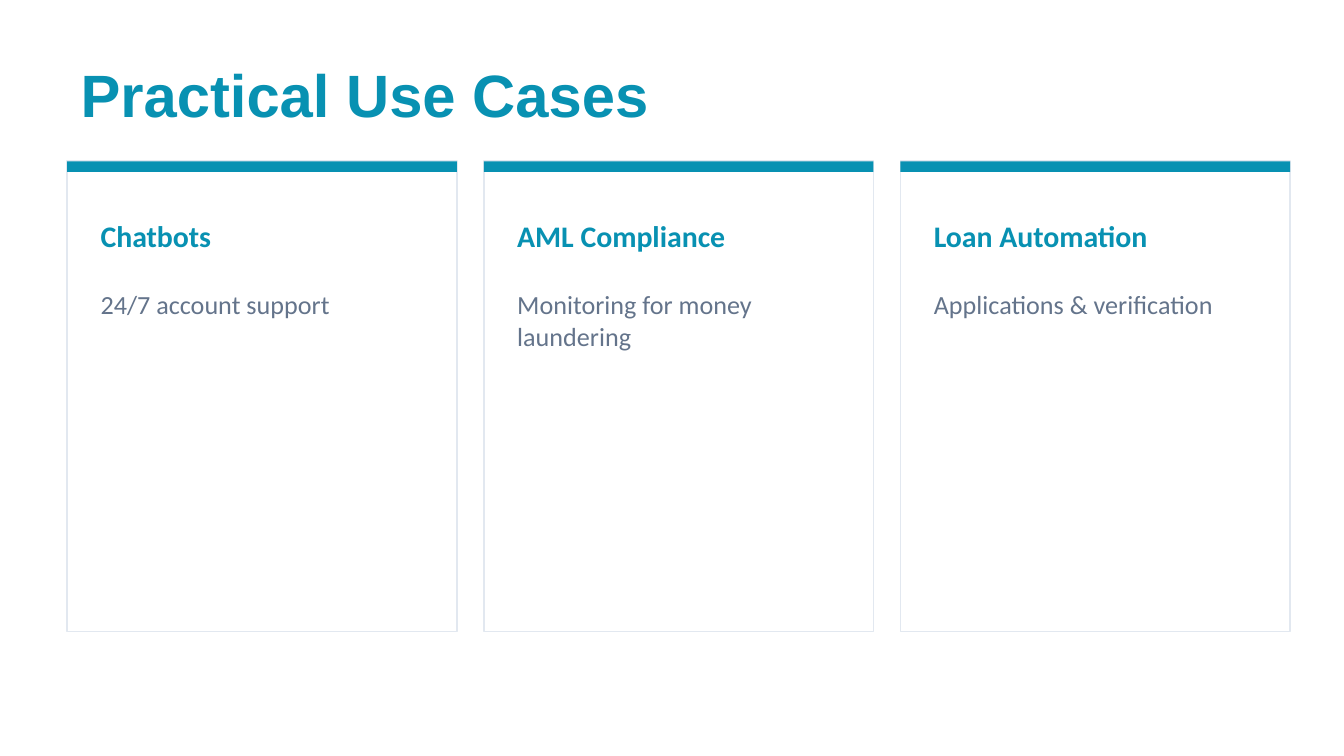
"""Build the Practical Use Cases slide with three cards."""
from pptx import Presentation
from pptx.dml.color import RGBColor
from pptx.enum.shapes import MSO_SHAPE
from pptx.enum.text import MSO_ANCHOR, PP_ALIGN
from pptx.util import Inches, Pt

RECTANGLE = MSO_SHAPE.RECTANGLE
TOP, MIDDLE = MSO_ANCHOR.TOP, MSO_ANCHOR.MIDDLE
LEFT = PP_ALIGN.LEFT

TEAL = RGBColor(0x08, 0x91, 0xB2)
SLATE = RGBColor(0x64, 0x74, 0x8B)
BORDER = RGBColor(0xE2, 0xE8, 0xF0)
WHITE = RGBColor(0xFF, 0xFF, 0xFF)

TITLE = "Practical Use Cases"
CARDS = [
    ("Chatbots", "24/7 account support"),
    ("AML Compliance", "Monitoring for money laundering"),
    ("Loan Automation", "Applications & verification"),
]

SLIDE_WIDTH = Inches(10)
SLIDE_HEIGHT = SLIDE_WIDTH * 9 // 16
MARGIN, CARD_TOP = 0.5, 1.2
CARD_WIDTH, CARD_HEIGHT, GAP = 2.9, 3.5, 0.2
BAR_HEIGHT, PADDING = 0.08, 0.15


def set_text(box, text, font_name, size, color, bold, anchor):
    frame = box.text_frame
    frame.text = text
    frame.word_wrap = True
    frame.vertical_anchor = anchor
    para = frame.paragraphs[0]
    para.alignment = LEFT
    font = para.runs[0].font
    font.name, font.size, font.bold = font_name, Pt(size), bold
    font.color.rgb = color


def add_rectangle(page, left, top, width, height, fill, line=None):
    box = page.shapes.add_shape(
        RECTANGLE, Inches(left), Inches(top), Inches(width), Inches(height))
    box.shadow.inherit = False
    box.fill.solid()
    box.fill.fore_color.rgb = fill
    if line is None:
        box.line.fill.background()
    else:
        box.line.color.rgb = line
        box.line.width = Pt(1)


def add_label(page, left, top, width, height, *style):
    box = page.shapes.add_textbox(
        Inches(left), Inches(top), Inches(width), Inches(height))
    set_text(box, *style)


def add_card(page, left, heading, body):
    add_rectangle(page, left, CARD_TOP, CARD_WIDTH, CARD_HEIGHT, WHITE, BORDER)
    add_rectangle(page, left, CARD_TOP, CARD_WIDTH, BAR_HEIGHT, TEAL)
    text_left, text_width = left + PADDING, CARD_WIDTH - 2 * PADDING
    add_label(page, text_left, CARD_TOP + 0.3, text_width, 0.5,
              heading, "Calibri", 16, TEAL, True, MIDDLE)
    add_label(page, text_left, CARD_TOP + 0.9, text_width, 2.4,
              body, "Calibri", 14, SLATE, False, TOP)


def main():
    deck = Presentation()
    deck.slide_width, deck.slide_height = SLIDE_WIDTH, SLIDE_HEIGHT
    page = deck.slides.add_slide(deck.slide_layouts[5])
    page.background.fill.solid()
    page.background.fill.fore_color.rgb = WHITE

    title = page.shapes.title
    title.left, title.top = Inches(MARGIN), Inches(0.4)
    title.width, title.height = Inches(9), Inches(0.6)
    set_text(title, TITLE, "Arial", 32, TEAL, True, MIDDLE)

    for index, (heading, body) in enumerate(CARDS):
        add_card(page, MARGIN + index * (CARD_WIDTH + GAP), heading, body)
    deck.save("out.pptx")


if __name__ == "__main__":
    main()
